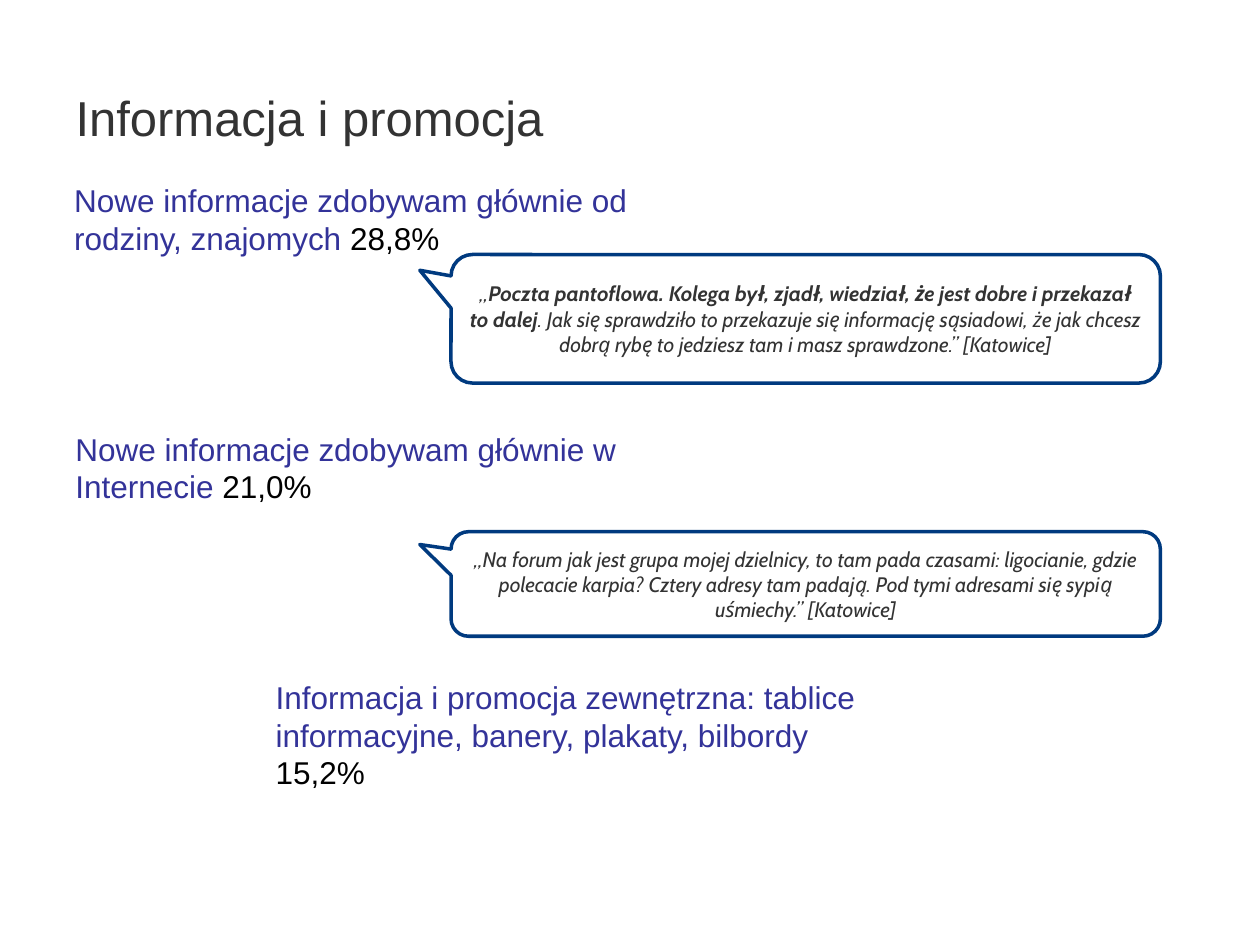
import pptx
import pptx.dml.color
import pptx.enum.shapes
import pptx.enum.text
import pptx.util

Inches, Pt = pptx.util.Inches, pptx.util.Pt
ALIGN = pptx.enum.text.PP_ALIGN
ANCHOR = pptx.enum.text.MSO_ANCHOR

WIDTH, HEIGHT = 10, 7.5
MARGIN = 0.05 * WIDTH
FINDING_WIDTH = 0.5 * WIDTH
QUOTE_LEFT, QUOTE_WIDTH = 3.58, 5.63
INK, INDIGO, NAVY, BLACK, WHITE = "333333", "333399", "003A7F", "000000", "FFFFFF"


def color(value):
    return pptx.dml.color.RGBColor.from_string(value)


def add_run(p, text, size, font, ink, bold=False, italic=False):
    r = p.add_run()
    r.text = text
    r.font.size = Pt(size)
    r.font.name = font
    r.font.color.rgb = color(ink)
    r.font.bold = bold
    r.font.italic = italic


def set_title(slide, text):
    sp = slide.shapes.title
    sp.left, sp.top = Inches(MARGIN), Inches(0.04 * HEIGHT)
    sp.width, sp.height = Inches(WIDTH - 2 * MARGIN), Inches(1.25)
    tf = sp.text_frame
    tf.vertical_anchor = ANCHOR.MIDDLE
    p = tf.paragraphs[0]
    p.alignment = ALIGN.LEFT
    add_run(p, text, 28, "Arial", INK)


def add_finding(slide, left, top, height, statement, share):
    """Add a survey statement followed by its percentage."""
    sp = slide.shapes.add_textbox(Inches(left), Inches(top),
                                  Inches(FINDING_WIDTH), Inches(height))
    tf = sp.text_frame
    tf.word_wrap = True
    tf.auto_size = pptx.enum.text.MSO_AUTO_SIZE.SHAPE_TO_FIT_TEXT
    p = tf.paragraphs[0]
    add_run(p, statement + " ", 18, "Arial", INDIGO)
    add_run(p, share, 18, "Arial", BLACK)


def add_quote(slide, top, height, parts):
    """Add a speech bubble; parts are (text, bold) pairs."""
    sp = slide.shapes.add_shape(
        pptx.enum.shapes.MSO_SHAPE.ROUNDED_RECTANGULAR_CALLOUT,
        Inches(QUOTE_LEFT), Inches(top), Inches(QUOTE_WIDTH), Inches(height))
    for i, value in enumerate((-0.544, -0.377, 0.167)):
        sp.adjustments[i] = value
    sp.shadow.inherit = False
    sp.fill.solid()
    sp.fill.fore_color.rgb = color(WHITE)
    sp.line.color.rgb = color(NAVY)
    sp.line.width = Pt(2)
    tf = sp.text_frame
    tf.word_wrap = True
    tf.vertical_anchor = ANCHOR.MIDDLE
    p = tf.paragraphs[0]
    p.alignment = ALIGN.CENTER
    for text, bold in parts:
        add_run(p, text, 12, "Cabin", INK, bold, italic=True)


def main():
    prs = pptx.Presentation()
    prs.slide_width, prs.slide_height = Inches(WIDTH), Inches(HEIGHT)
    slide = prs.slides.add_slide(prs.slide_layouts[5])

    set_title(slide, "Informacja i promocja")
    add_finding(slide, MARGIN, 3.36, 0.71,
                "Nowe informacje zdobywam głównie w Internecie", "21,0%")
    add_finding(slide, MARGIN - 0.01, 1.39, 0.71,
                "Nowe informacje zdobywam głównie od rodziny, znajomych", "28,8%")
    add_finding(slide, 2.09, 5.33, 1.01,
                "Informacja i promocja zewnętrzna: tablice informacyjne, "
                "banery, plakaty, bilbordy", "15,2%")
    add_quote(slide, 2.02, 1.02, [
        ("„", False),
        ("Poczta pantoflowa. Kolega był, zjadł, wiedział, że jest dobre "
         "i przekazał to dalej", True),
        (". Jak się sprawdziło to przekazuje się informację sąsiadowi, że jak "
         "chcesz dobrą rybę to jedziesz tam i masz sprawdzone.” [Katowice]", False),
    ])
    add_quote(slide, 4.22, 0.83, [
        ("„Na forum jak jest grupa mojej dzielnicy, to tam pada czasami: "
         "ligocianie, gdzie polecacie karpia? Cztery adresy tam padają. "
         "Pod tymi adresami się sypią uśmiechy.” [Katowice]", False),
    ])
    prs.save("out.pptx")


if __name__ == "__main__":
    main()
